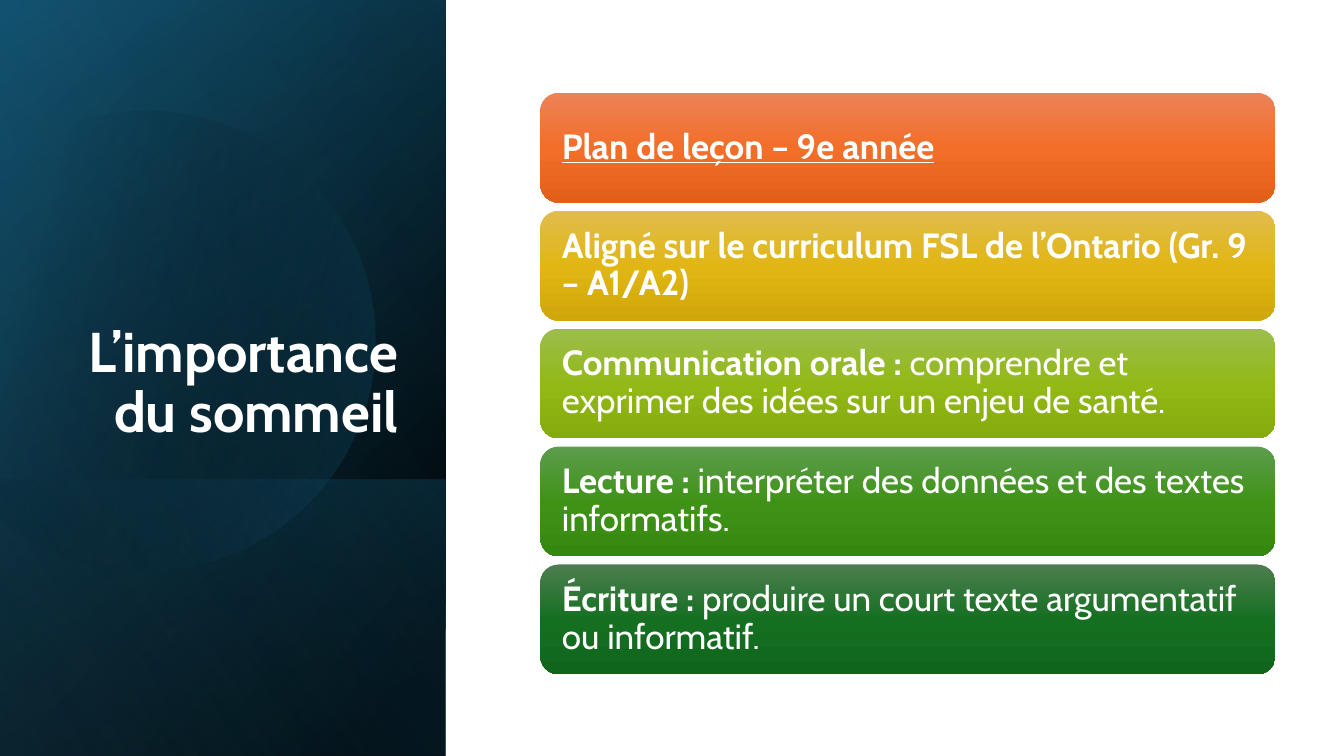
from math import cos, sin, radians

from pptx import Presentation
from pptx.dml.color import RGBColor as Rgb
from pptx.enum.shapes import MSO_SHAPE as Kind
from pptx.enum.text import MSO_ANCHOR as Anchor, PP_ALIGN as Align
from pptx.oxml import parse_xml
from pptx.oxml.ns import nsdecls
from pptx.util import Pt

PX = 9144  # 100 px to the inch


def px(*nums):
    return [round(n * PX) for n in nums]


def hue(code):
    return Rgb.from_string(code)


def curve(a, b, c, d, steps=24):
    """Points along a cubic curve, without its start."""
    for i in range(1, steps + 1):
        t = i / steps
        u = 1 - t
        yield tuple(u**3 * p + 3 * u * u * t * q + 3 * u * t * t * r + t**3 * s
                    for p, q, r, s in zip(a, b, c, d))


def spin(point, hub, turn):
    """Turn a point clockwise about a hub."""
    x, y = point[0] - hub[0], point[1] - hub[1]
    c, s = cos(radians(turn)), sin(radians(turn))
    return hub[0] + x * c - y * s, hub[1] + x * s + y * c


class Deck:
    font, ink = "Cabin", "FFFFFF"

    def __init__(self, wide, high):
        self.file = Presentation()
        self.file.slide_width, self.file.slide_height = px(wide, high)
        self.slide = self.file.slides.add_slide(self.file.slide_layouts[6])
        self.shapes = self.slide.shapes

    def shade(self, shape, stops, angle):
        """Gradient fill; each stop is place, colour and opacity in percent."""
        marks = "".join(
            f'<a:gs pos="{place * 1000}"><a:srgbClr val="{hue(code)}">'
            f'<a:alpha val="{alpha * 1000}"/></a:srgbClr></a:gs>'
            for place, code, alpha in stops)
        fill = parse_xml(
            f'<a:gradFill {nsdecls("a")} rotWithShape="1"><a:gsLst>{marks}</a:gsLst>'
            f'<a:lin ang="{angle * 60000}" scaled="0"/></a:gradFill>')
        shape.shadow.inherit = False
        shape.line.fill.background()
        shape._element.spPr.xfrm.getnext().addnext(fill)

    def panel(self, box, stops, angle):
        """Rectangle flipped and set on its side."""
        shape = self.shapes.add_shape(Kind.RECTANGLE, *px(*box))
        shape.rotation = 90
        shape._element.spPr.xfrm.set("flipH", "1")
        self.shade(shape, stops, angle)

    def disc(self, start, parts, hub, turn, stops, angle):
        """Outline of curves (three points) and lines (one point)."""
        points = [start]
        for part in parts:
            points += curve(points[-1], *part) if len(part) == 3 else part
        flat = [px(*spin(p, hub, -turn)) for p in points]
        pen = self.shapes.build_freeform(*flat[0])
        pen.add_line_segments(flat[1:], close=True)
        shape = pen.convert_to_shape()
        shape.rotation = turn
        self.shade(shape, stops, angle)

    def label(self, shape, runs, size, align, anchor, pads):
        """Runs are text, bold and underline."""
        frame = shape.text_frame
        frame.word_wrap = True
        frame.vertical_anchor = anchor
        (frame.margin_left, frame.margin_top,
         frame.margin_right, frame.margin_bottom) = px(*pads)
        para = frame.paragraphs[0]
        para.alignment, para.line_spacing = align, 0.9
        for text, bold, under in runs:
            run = para.add_run()
            run.text = text
            font = run.font
            font.name, font.size = self.font, Pt(size)
            font.bold, font.underline = bold, under
            font.color.rgb = hue(self.ink)

    def title(self, box, text):
        shape = self.shapes.add_textbox(*px(*box))
        self.label(shape, [(text, True, False)], 40, Align.RIGHT,
                   Anchor.BOTTOM, (10, 5, 10, 5))

    def card(self, box, tones, runs):
        shape = self.shapes.add_shape(Kind.ROUNDED_RECTANGLE, *px(*box))
        stops = [(place, code, 100) for place, code in zip((0, 50, 100), tones)]
        self.shade(shape, stops, 90)
        self.label(shape, runs, 25, Align.LEFT, Anchor.MIDDLE, (16, 15, 15, 15))


CARDS = [
    (("ED8257", "F26E29", "E25F1A"),
     [("Plan de leçon – 9e année", True, True)]),
    (("E1BC4E", "E1B614", "D0A70A"),
     [("Aligné sur le curriculum FSL de l’Ontario (Gr. 9 – A1/A2)", True, False)]),
    (("9CBD4E", "92B916", "85AB0D"),
     [("Communication orale :", True, False),
      (" comprendre et exprimer des idées sur un enjeu de santé.", False, False)]),
    (("5E9C4E", "3E9317", "35880F"),
     [("Lecture :", True, False),
      (" interpréter des données et des textes informatifs.", False, False)]),
    (("4D7E50", "156F21", "0F661B"),
     [("Écriture :", True, False),
      (" produire un court texte argumentatif ou informatif.", False, False)]),
]

# Round outline, cut straight on the left
ROUND = [
    [(246, 112), (335, 177), (363, 275)],
    [(398, 397), (328, 523), (207, 558)],
    [(131, 580), (53, 561), (-3, 514)],
    [(-15, 503)], [(-15, 175)], [(0, 161)],
    [(23, 142), (50, 128), (80, 119)],
    [(103, 113), (126, 110), (149, 110)],
]


def main():
    deck = Deck(1333, 750)
    side = (-154, 154, 750, 442)

    # Dark side panel
    deck.panel(side, [(8, "000000", 100), (100, "104862", 100)], 50)
    deck.panel(side, [(0, "000000", 0), (99, "156082", 46)], 30)
    deck.panel((84, 392, 274, 442), [(2, "156082", 29), (100, "000000", 30)], 130)
    deck.disc((149, 110), ROUND, (158, 334), 343.9,
              [(29, "000000", 0), (100, "156082", 43)], 30)
    deck.panel(side, [(0, "000000", 0), (99, "46B1E1", 11)], 120)

    # Title
    deck.title((64, 184, 341, 262), "L’importance du sommeil")

    # Stack of cards
    for i, (tones, runs) in enumerate(CARDS):
        deck.card((536, 92 + 117 * i, 729, 109), tones, runs)

    deck.file.save("out.pptx")


if __name__ == "__main__":
    main()
